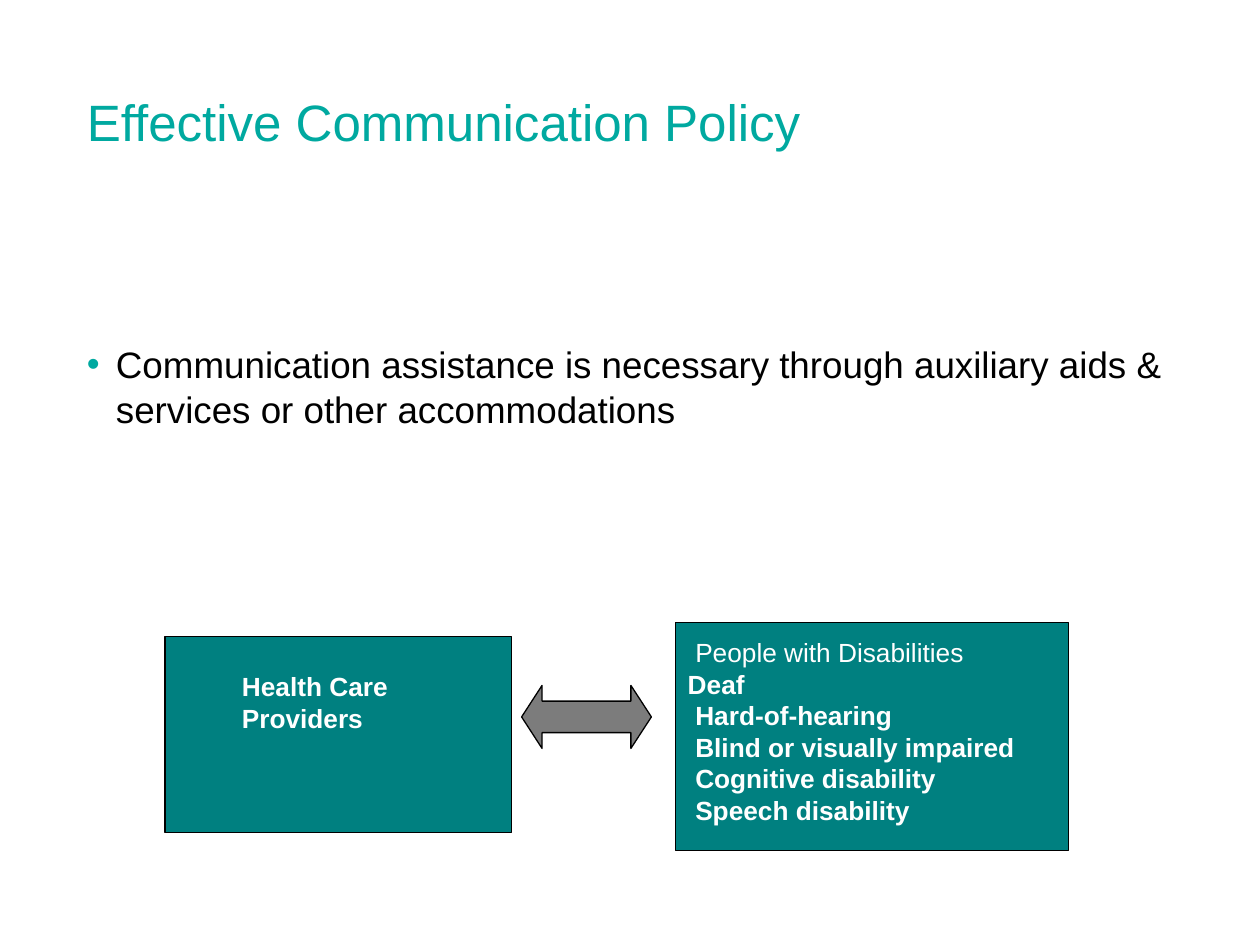
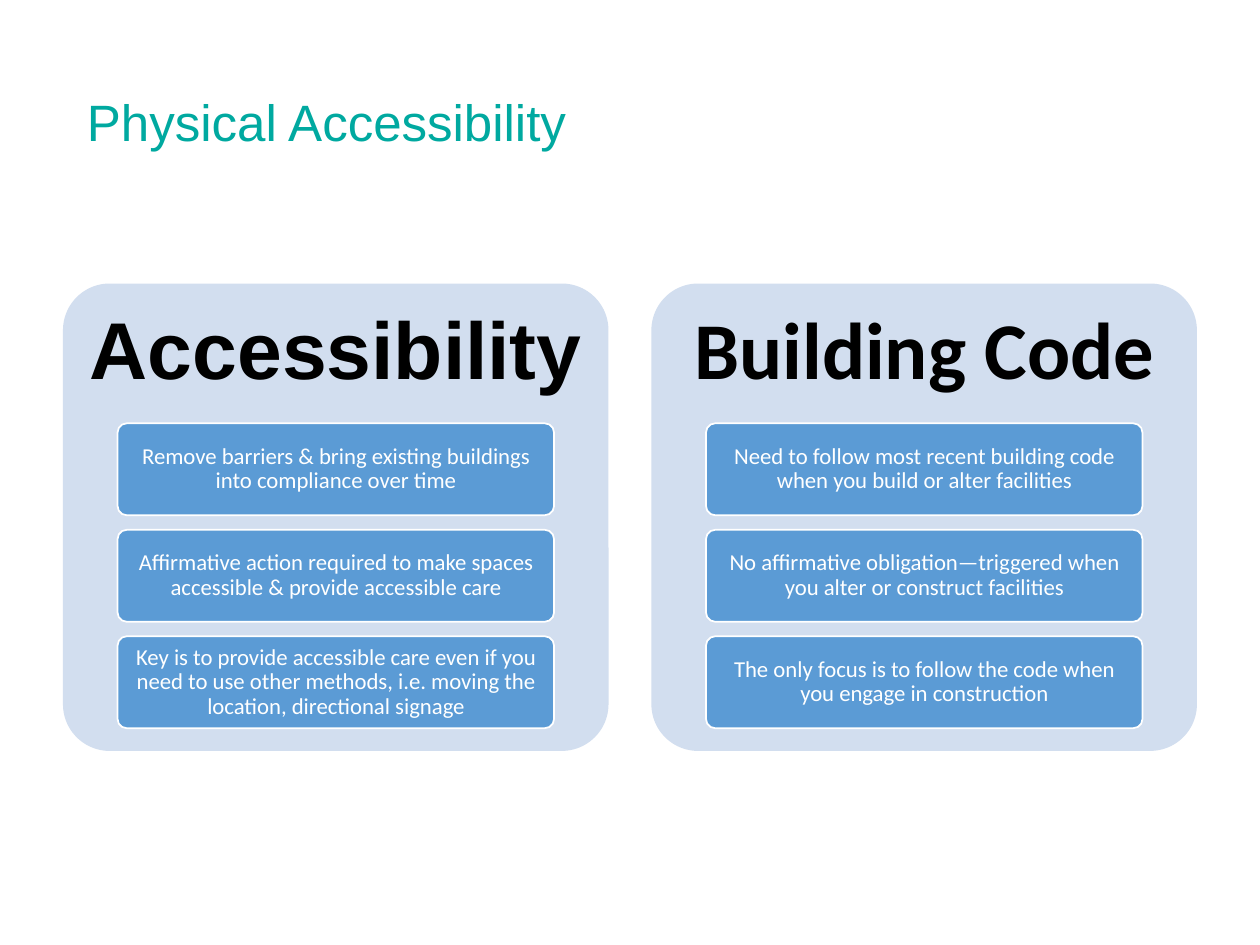
from dataclasses import dataclass

import lxml.etree
import pptx
import pptx.dml.color
import pptx.enum.shapes
import pptx.enum.text
import pptx.oxml.ns
import pptx.util

Inches = pptx.util.Inches
Pt = pptx.util.Pt
Align = pptx.enum.text.PP_ALIGN
Anchor = pptx.enum.text.MSO_ANCHOR
Shape = pptx.enum.shapes.MSO_SHAPE


@dataclass(frozen=True)
class Theme:
    accent: str = "00A9A0"
    party: str = "008080"
    arrow: str = "7C7C7C"
    panel: str = "D2DEEF"
    point: str = "5B9BD5"
    dark: str = "000000"
    light: str = "FFFFFF"
    main_font: str = "Arial"
    point_font: str = "Calibri"
    title_size: float = 29.2
    body_size: float = 21
    body_leading: float = 25.5
    party_size: float = 15
    heading_size: float = 46
    point_size: float = 13
    outline: float = 0.75


@dataclass(frozen=True)
class Box:
    """A rectangle in inches."""
    left: float
    top: float
    width: float
    height: float

    def inner(self, left, top, width, height):
        """Return a box placed relative to this one's corner."""
        return Box(self.left + left, self.top + top, width, height)

    def lengths(self):
        return [Inches(v) for v in (self.left, self.top, self.width, self.height)]


THEME = Theme()
TITLE_BOX = Box(0.69, 0.72, 8.62, 1.27)
BODY_BOX = Box(0.69, 2.71, 8.62, 1.2)
EXCHANGE_BOX = Box(1.31, 4.94, 7.17, 1.81)
COMPARISON_BOX = Box(0.5, 2.25, 9, 3.71)
PEOPLE = ["Deaf", "Hard-of-hearing", "Blind or visually impaired",
          "Cognitive disability", "Speech disability"]
PANELS = [
    ("Accessibility", THEME.main_font, [
        "Remove barriers & bring existing buildings into compliance over time",
        "Affirmative action required to make spaces accessible & provide accessible care",
        "Key is to provide accessible care even if you need to use other methods, "
        "i.e. moving the location, directional signage",
    ]),
    ("Building Code", THEME.point_font, [
        "Need to follow most recent building code when you build or alter facilities",
        "No affirmative obligation—triggered when you alter or construct facilities",
        "The only focus is to follow the code when you engage in construction",
    ]),
]


def rgb(value):
    return pptx.dml.color.RGBColor.from_string(value)


def set_frame(shape, margins=(0, 0, 0, 0), anchor=Anchor.TOP):
    """Wrap the text of a shape; margins are left, top, right, bottom."""
    frame = shape.text_frame
    frame.word_wrap = True
    frame.vertical_anchor = anchor
    (frame.margin_left, frame.margin_top,
     frame.margin_right, frame.margin_bottom) = map(Inches, margins)
    return frame


def write(frame, text, size, color, font=THEME.main_font, bold=False,
          align=Align.LEFT, leading=1.0, before=0, indent=0, bullet=None):
    """Write one paragraph, filling the empty first one when there is one."""
    first = frame.paragraphs[0]
    para = frame.add_paragraph() if first.runs else first
    para.alignment = align
    para.line_spacing = leading
    para.space_before = Pt(before)
    properties = para._p.get_or_add_pPr()
    properties.set("marL", str(Inches(indent)))
    if bullet:
        properties.set("indent", str(-Inches(indent)))
        name = pptx.oxml.ns.qn
        tint = lxml.etree.SubElement(properties, name("a:buClr"))
        lxml.etree.SubElement(tint, name("a:srgbClr"), val=THEME.accent)
        lxml.etree.SubElement(properties, name("a:buFont"), typeface=font)
        lxml.etree.SubElement(properties, name("a:buChar"), char=bullet)
    span = para.add_run()
    span.text = text
    span.font.size = Pt(size)
    span.font.name = font
    span.font.bold = bold
    span.font.color.rgb = rgb(color)


def add_text_box(page, box, **frame_format):
    return set_frame(page.shapes.add_textbox(*box.lengths()), **frame_format)


def add_block(page, kind, box, fill, line=None, line_width=THEME.outline, adjust=()):
    shape = page.shapes.add_shape(kind, *box.lengths())
    shape.shadow.inherit = False
    shape.fill.solid()
    shape.fill.fore_color.rgb = rgb(fill)
    if line:
        shape.line.color.rgb = rgb(line)
        shape.line.width = Pt(line_width)
    else:
        shape.line.fill.background()
    for index, value in enumerate(adjust):
        shape.adjustments[index] = value
    return shape


def add_page(deck, title):
    page = deck.slides.add_slide(deck.slide_layouts[6])
    write(add_text_box(page, TITLE_BOX), title, THEME.title_size, THEME.accent)
    return page


def add_exchange(page, box):
    """Draw providers and people with disabilities, joined by a two-way arrow."""
    people = add_block(page, Shape.RECTANGLE, box.inner(4.05, 0, 3.12, box.height),
                       THEME.party, THEME.dark)
    frame = set_frame(people, margins=(0.1, 0.16, 0.35, 0.05))
    style = dict(size=THEME.party_size, color=THEME.light, leading=0.8)
    write(frame, "People with Disabilities", indent=0.06, **style)
    for group in PEOPLE:
        write(frame, group, bold=True, before=3.6,
              indent=0 if group == "Deaf" else 0.06, **style)

    add_block(page, Shape.LEFT_RIGHT_ARROW, box.inner(2.83, 0.5, 1.03, 0.5),
              THEME.arrow, THEME.dark, adjust=(0.5, 0.325))

    providers = add_block(page, Shape.RECTANGLE, box.inner(0, 0.11, 2.75, 1.56),
                          THEME.party, THEME.dark)
    frame = set_frame(providers, margins=(0.61, 0.27, 0.03, 0.05))
    write(frame, "Health Care Providers", THEME.party_size, THEME.light, bold=True)


def add_panel(page, box, heading, heading_font, points):
    heading_height, point_height, point_step = 1.11, 0.73, 0.845
    add_block(page, Shape.ROUNDED_RECTANGLE, box, THEME.panel, adjust=(0.1,))
    frame = add_text_box(page, box.inner(0, 0, box.width, heading_height),
                         margins=(0.19,) * 4, anchor=Anchor.MIDDLE)
    write(frame, heading, THEME.heading_size, THEME.dark, font=heading_font,
          bold=True, align=Align.CENTER, leading=0.9)
    for index, point in enumerate(points):
        place = box.inner(box.width * 0.1, heading_height + index * point_step,
                          box.width * 0.8, point_height)
        shape = add_block(page, Shape.ROUNDED_RECTANGLE, place, THEME.point,
                          THEME.light, line_width=1, adjust=(0.1,))
        frame = set_frame(shape, margins=(0.06, 0.05, 0.06, 0.05), anchor=Anchor.MIDDLE)
        write(frame, point, THEME.point_size, THEME.light, font=THEME.point_font,
              align=Align.CENTER, leading=0.9)


def add_comparison(page, box, panels, gap=0.34):
    """Spread the panels evenly across the box."""
    width = (box.width - gap * (len(panels) - 1)) / len(panels)
    for index, panel in enumerate(panels):
        add_panel(page, box.inner(index * (width + gap), 0, width, box.height), *panel)


def build_communication_page(deck):
    page = add_page(deck, "Effective Communication Policy")
    write(add_text_box(page, BODY_BOX),
          "Communication assistance is necessary through auxiliary aids & "
          "services or other accommodations",
          THEME.body_size, THEME.dark, leading=Pt(THEME.body_leading),
          indent=0.23, bullet="•")
    add_exchange(page, EXCHANGE_BOX)


def build_accessibility_page(deck):
    page = add_page(deck, "Physical Accessibility")
    add_comparison(page, COMPARISON_BOX, PANELS)


def main():
    deck = pptx.Presentation()
    deck.slide_width, deck.slide_height = Inches(10), Inches(7.5)
    build_communication_page(deck)
    build_accessibility_page(deck)
    deck.save("out.pptx")


if __name__ == "__main__":
    main()
